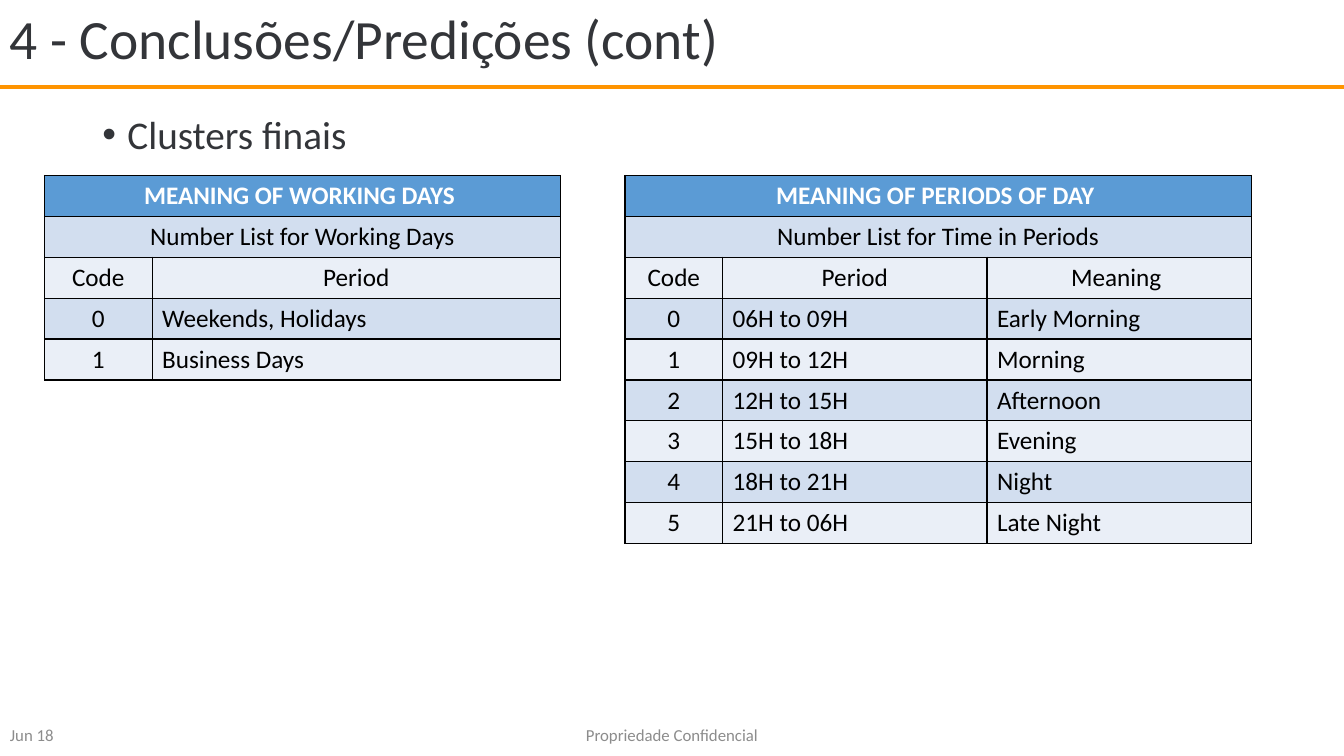
from lxml.etree import SubElement
from pptx import Presentation
from pptx.dml.color import RGBColor
from pptx.enum.shapes import MSO_CONNECTOR
from pptx.enum.text import MSO_ANCHOR, PP_ALIGN
from pptx.oxml.ns import qn
from pptx.util import Pt

COLORS = {
    "accent": "FF9400",
    "ink": "333539",
    "muted": "8C8C8C",
    "header": "5B9BD5",
    "dark_band": "D2DEEF",
    "light_band": "EAEFF7",
    "white": "FFFFFF",
    "black": "000000",
}
FONT = "Calibri"
PAGE_WIDTH, PAGE_HEIGHT = 960, 540
ROW_HEIGHT = 29.25


def color(name):
    return RGBColor.from_string(COLORS[name])


def write(frame, text, size=18, ink="black", bold=False, align=PP_ALIGN.LEFT,
          anchor=MSO_ANCHOR.TOP, spacing=None, bullet=None):
    frame.word_wrap = True
    frame.vertical_anchor = anchor
    para = frame.paragraphs[0]
    para.alignment = align
    if spacing:
        para.line_spacing = spacing
    if bullet:
        properties = para._p.get_or_add_pPr()
        properties.set("marL", str(Pt(18)))
        properties.set("indent", str(-Pt(18)))
        SubElement(properties, qn("a:buFont"), typeface="Arial")
        SubElement(properties, qn("a:buChar"), char=bullet)
    span = para.add_run()
    span.text = text
    span.font.name = FONT
    span.font.size = Pt(size)
    span.font.bold = bold
    span.font.color.rgb = color(ink)


def add_text(page, box, text, **formatting):
    shape = page.shapes.add_textbox(*map(Pt, box))
    write(shape.text_frame, text, **formatting)


def add_heading(page, box, text):
    left, top, width, height = box
    rule_top = top + height
    rule = page.shapes.add_connector(
        MSO_CONNECTOR.STRAIGHT, Pt(left), Pt(rule_top), Pt(left + width), Pt(rule_top))
    rule.line.color.rgb = color("accent")
    rule.line.width = Pt(3)
    SubElement(rule._element.spPr, qn("a:effectLst"))
    add_text(page, (left, top + 3, 828, 53), text, size=39.6, ink="ink",
             anchor=MSO_ANCHOR.MIDDLE, spacing=0.9)


def add_footer(page, box, date, notice):
    left, top, width, height = box
    notice_width = 324
    style = {"size": 12, "ink": "muted", "anchor": MSO_ANCHOR.MIDDLE}
    add_text(page, (left, top, 216, height), date, **style)
    add_text(page, (left + (width - notice_width) / 2, top, notice_width, height),
             notice, align=PP_ALIGN.CENTER, **style)


def add_borders(cell):
    properties = cell._tc.get_or_add_tcPr()
    for side in ("lnL", "lnR", "lnT", "lnB"):
        line = SubElement(properties, qn(f"a:{side}"), w=str(Pt(1)))
        fill = SubElement(line, qn("a:solidFill"))
        SubElement(fill, qn("a:srgbClr"), val=COLORS["black"])


def add_code_table(page, left, top, widths, title, subtitle, rows):
    blanks = [""] * (len(widths) - 1)
    lines = [[title, *blanks], [subtitle, *blanks], *rows]
    table = page.shapes.add_table(
        len(lines), len(widths), Pt(left), Pt(top),
        Pt(sum(widths)), Pt(ROW_HEIGHT * len(lines))).table
    table.first_row = False
    table.horz_banding = False
    for column, width in zip(table.columns, widths):
        column.width = Pt(width)
    for row_index, line in enumerate(lines):
        table.rows[row_index].height = Pt(ROW_HEIGHT)
        is_title = row_index == 0
        band = "header" if is_title else "dark_band" if row_index % 2 else "light_band"
        for column_index, text in enumerate(line):
            cell = table.cell(row_index, column_index)
            add_borders(cell)
            cell.fill.solid()
            cell.fill.fore_color.rgb = color(band)
            if text:
                centred = row_index < 3 or column_index == 0
                write(cell.text_frame, text, bold=is_title,
                      ink="white" if is_title else "black",
                      align=PP_ALIGN.CENTER if centred else PP_ALIGN.LEFT)
    for row_index in range(2):
        table.cell(row_index, 0).merge(table.cell(row_index, len(widths) - 1))


def main():
    deck = Presentation()
    deck.slide_width, deck.slide_height = Pt(PAGE_WIDTH), Pt(PAGE_HEIGHT)
    page = deck.slides.add_slide(deck.slide_layouts[6])

    add_heading(page, (0, 0, PAGE_WIDTH, 62), "4 - Conclusões/Predições (cont)")
    add_text(page, (66, 79, 828, 420), "Clusters finais",
             size=28, ink="ink", spacing=0.9, bullet="•")
    add_footer(page, (0, 510.5, PAGE_WIDTH, 29), "Jun 18", "Propriedade Confidencial")

    add_code_table(
        page, 31.7, 125.3, (77, 291.6),
        "MEANING OF WORKING DAYS ", "Number List for Working Days",
        [("Code", "Period"), ("0", "Weekends, Holidays"), ("1", "Business Days")])
    add_code_table(
        page, 446.4, 125.3, (69.8, 188.8, 188.8),
        "MEANING OF PERIODS OF DAY ", "Number List for Time in Periods",
        [("Code", "Period", "Meaning "),
         ("0", "06H to 09H", "Early Morning"),
         ("1", "09H to 12H", "Morning"),
         ("2", "12H to 15H", "Afternoon"),
         ("3", "15H to 18H", "Evening"),
         ("4", "18H to 21H", "Night"),
         ("5", "21H to 06H", "Late Night")])
    deck.save("out.pptx")


if __name__ == "__main__":
    main()
